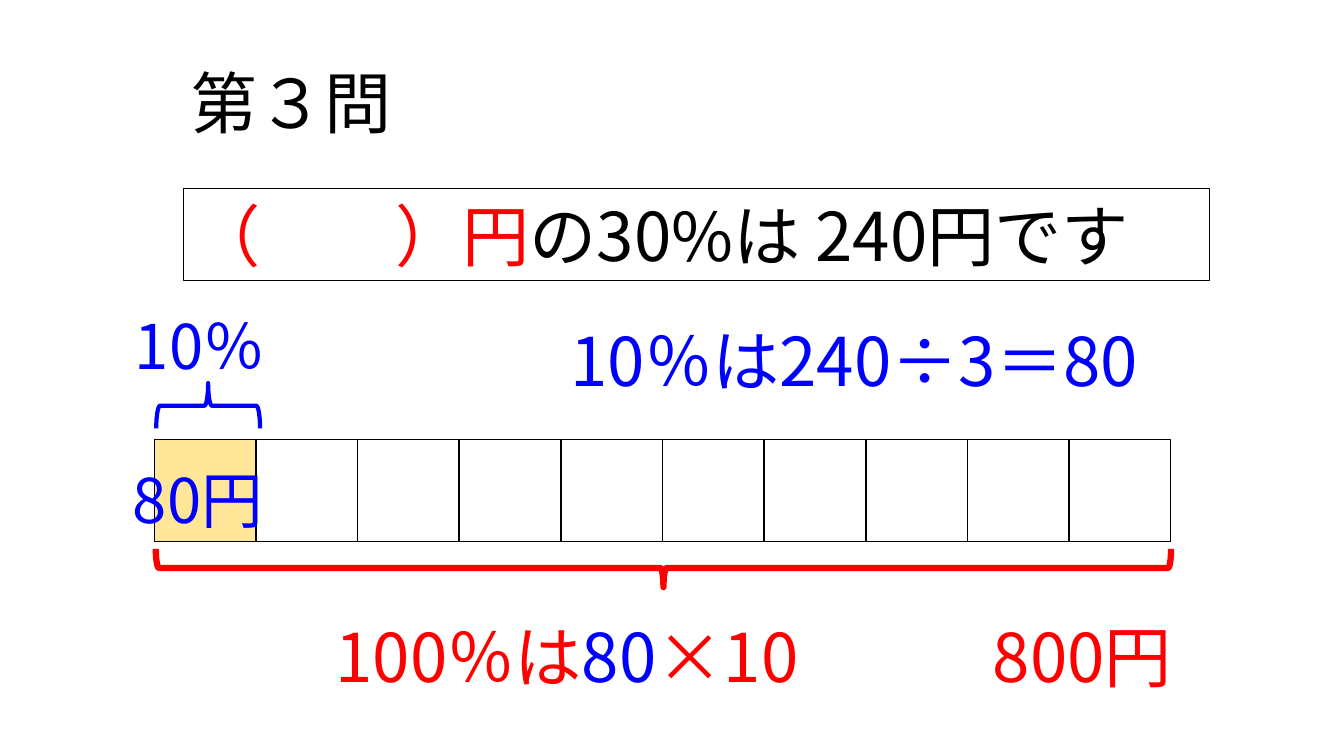
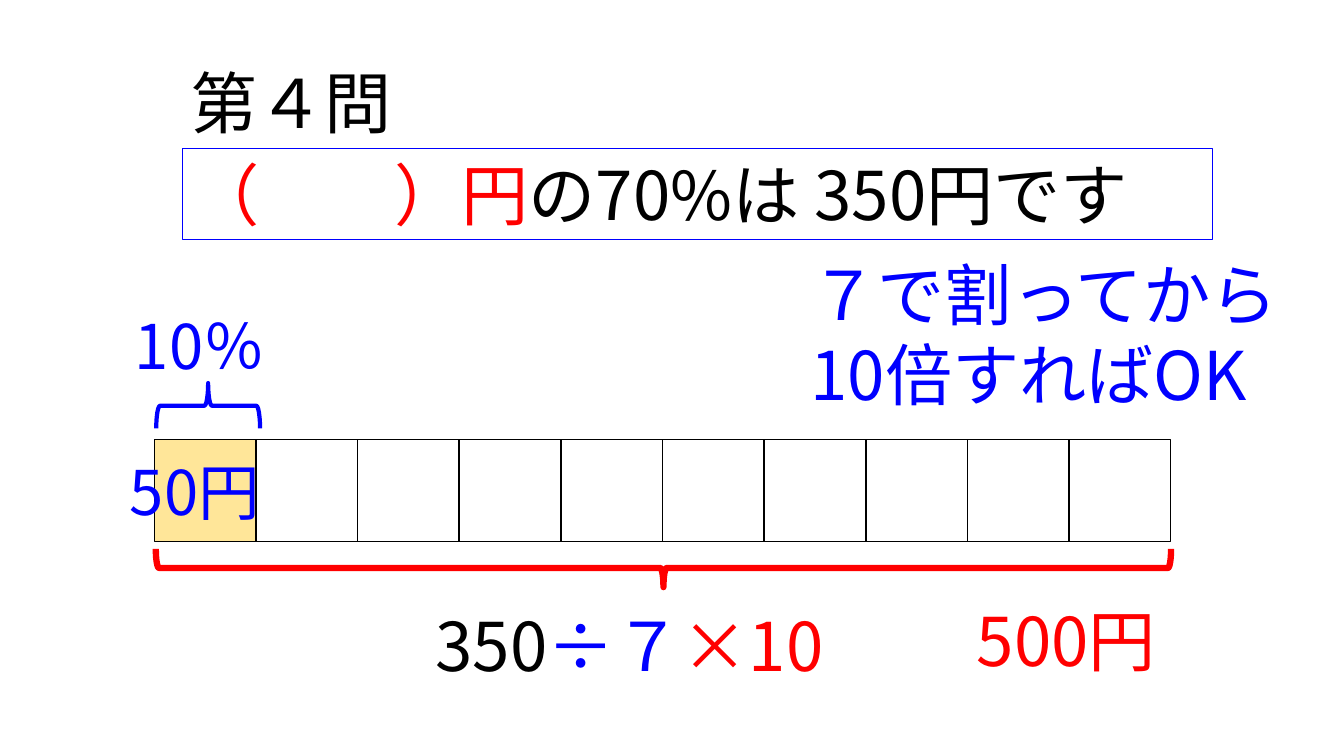
from pptx import Presentation
from pptx.dml.color import RGBColor
from pptx.enum.shapes import MSO_SHAPE as Shape
from pptx.enum.text import MSO_ANCHOR as Anchor
from pptx.oxml.ns import qn
from pptx.util import Inches, Pt

BLACK = RGBColor(0, 0, 0)
BLUE = RGBColor(0, 0, 255)
RED = RGBColor(255, 0, 0)
CREAM = RGBColor(0xFF, 0xE6, 0x99)
FONT = "Noto Sans CJK JP"
PARTS = 10


class Deck:
    def __init__(self):
        self.presentation = Presentation()
        self.presentation.slide_width = Inches(13.33)
        self.presentation.slide_height = Inches(7.5)
        self.slide = None

    def new_slide(self):
        layout = self.presentation.slide_layouts[6]
        self.slide = self.presentation.slides.add_slide(layout)

    def shape(self, kind, box, line, weight, fill=None):
        shape = self.slide.shapes.add_shape(kind, *map(Inches, box))
        shape.shadow.inherit = False
        if fill is None:
            shape.fill.background()
        else:
            shape.fill.solid()
            shape.fill.fore_color.rgb = fill
        shape.line.color.rgb = line
        shape.line.width = Pt(weight)
        return shape

    def text(self, box, *lines, size=48, border=None):
        """Each line is a list of (wording, colour) pieces."""
        shape = self.slide.shapes.add_textbox(*map(Inches, box))
        if border is not None:
            shape.line.color.rgb = border
            shape.line.width = Pt(0.75)
        frame = shape.text_frame
        frame.word_wrap = True
        frame.margin_right = 0
        frame.vertical_anchor = Anchor.MIDDLE
        for index, pieces in enumerate(lines):
            paragraph = frame.add_paragraph() if index else frame.paragraphs[0]
            paragraph.line_spacing = Pt(size * 1.2)
            for wording, colour in pieces:
                run = paragraph.add_run()
                run.text = wording
                run.font.size = Pt(size)
                run.font.name = FONT
                run.font.color.rgb = colour
                east_asian = run.font._element.makeelement(qn("a:ea"), {"typeface": FONT})
                run.font._element.find(qn("a:latin")).addnext(east_asian)

    def brace(self, box, rotation, colour, weight):
        self.shape(Shape.RIGHT_BRACE, box, colour, weight).rotation = rotation

    def percent_bar(self):
        """Ten equal parts, the first one filled, with braces for 10% and 100%."""
        for part in range(PARTS):
            box = (1.53 + part * 1.008, 4.36, 1.01, 1.01)
            self.shape(Shape.RECTANGLE, box, BLACK, 1, None if part else CREAM)
        self.brace((6.39, 0.6, 0.38, 10.07), 90, RED, 4.5)
        self.brace((1.84, 3.51, 0.45, 1.03), 270, BLUE, 3)
        self.text((1.24, 3, 1.77, 0.84), [("10％", BLUE)], size=44)

    def question(self, number, box, statement, border):
        self.new_slide()
        self.percent_bar()
        self.text((1.79, 0.55, 2.36, 0.91), [(f"第{number}問", BLACK)])
        self.text(box, [("（　　）円", RED), (statement, BLACK)], border=border)


def main():
    deck = Deck()

    deck.question("３", (1.82, 1.87, 10.18, 0.91), "の30%は 240円です", BLACK)
    deck.text((1.22, 4.53, 1.75, 0.84), [("80円", BLUE)], size=44)
    deck.text((5.56, 3.11, 6.85, 0.91), [("10％は240÷3＝80", BLUE)])
    deck.text((3.23, 6.05, 5.65, 0.91), [("100％は", RED), ("80", BLUE), ("×10", RED)])
    deck.text((9.75, 6.05, 2.35, 0.91), [("800円", RED)])

    deck.question("４", (1.81, 1.47, 10.22, 0.91), "の70%は 350円です", BLUE)
    deck.text((1.19, 4.45, 1.77, 0.84), [("50円", BLUE)], size=44)
    deck.text((7.94, 2.45, 5.05, 1.72), [("７で割ってから", BLUE)], [("10倍すればOK", BLUE)])
    deck.text((4.22, 5.94, 4.71, 0.91), [("350", BLACK), ("÷７", BLUE), ("×10", RED)])
    deck.text((9.59, 5.89, 2.44, 0.91), [("500円", RED)])

    deck.presentation.save("out.pptx")


if __name__ == "__main__":
    main()
